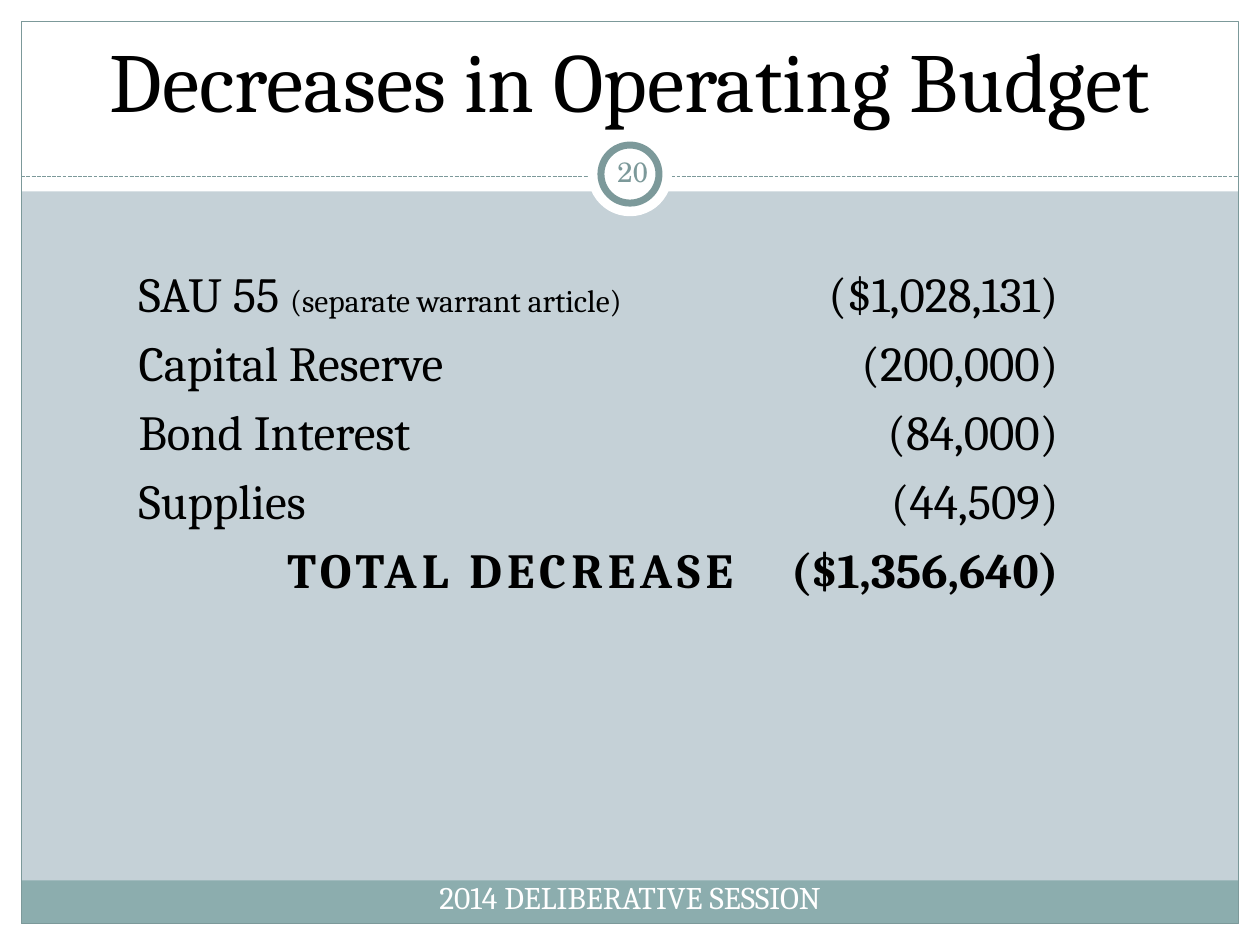
from pptx import Presentation
from pptx.dml.color import RGBColor
from pptx.enum.dml import MSO_LINE
from pptx.enum.shapes import MSO_CONNECTOR, MSO_SHAPE
from pptx.enum.text import MSO_ANCHOR as ANCHOR, PP_ALIGN as ALIGN
from pptx.oxml.ns import qn
from pptx.util import Cm, Pt
from lxml.etree import SubElement

WIDTH, HEIGHT = 25.4, 19.05
MARGIN = 0.43
HEADER_H = 3.86
RULE_Y = 3.56
BADGE_Y = 3.51
WHITE, BLACK, TEAL, SAGE, MIST = "FFFFFF", "000000", "7C999A", "8CADAE", "C5D1D7"
NO_STYLE = "{2D5ABB26-0587-4C30-8999-92F81FD0307C}"
DECREASES = [
    ("SAU 55 ", "(separate warrant article)", "($1,028,131)"),
    ("Capital Reserve", "", "(200,000)"),
    ("Bond Interest", "", "(84,000)"),
    ("Supplies", "", "(44,509)"),
]
TOTAL = ("TOTAL DECREASE", "($1,356,640)")


def rgb(color):
    return RGBColor.from_string(color)


def add_run(p, text, size, color=BLACK, font="Cambria", bold=False, spacing=0):
    """Append a run; spacing is the letter spacing in points."""
    r = p.add_run()
    r.text = text
    r.font.size, r.font.name, r.font.bold = Pt(size), font, bold
    r.font.color.rgb = rgb(color)
    if spacing:
        r._r.get_or_add_rPr().set("spc", str(spacing * 100))


def add_block(slide, kind, x, y, w, h, fill=None, line=None, weight=0.75):
    sp = slide.shapes.add_shape(kind, Cm(x), Cm(y), Cm(w), Cm(h))
    sp.shadow.inherit = False
    if fill:
        sp.fill.solid()
        sp.fill.fore_color.rgb = rgb(fill)
    else:
        sp.fill.background()
    if line:
        sp.line.color.rgb = rgb(line)
        sp.line.width = Pt(weight)
    else:
        sp.line.fill.background()


def add_disc(slide, diameter, **style):
    """Draw a circle centred on the page-number badge."""
    add_block(slide, MSO_SHAPE.OVAL, (WIDTH - diameter) / 2, BADGE_Y - diameter / 2,
              diameter, diameter, **style)


def add_rule(slide):
    rule = slide.shapes.add_connector(MSO_CONNECTOR.STRAIGHT, Cm(MARGIN), Cm(RULE_Y),
                                      Cm(WIDTH - MARGIN), Cm(RULE_Y))
    rule.line.color.rgb = rgb(TEAL)
    rule.line.width = Pt(0.75)
    rule.line.dash_style = MSO_LINE.SQUARE_DOT
    SubElement(rule._element.spPr, qn("a:effectLst"))


def add_frame(slide):
    inner_w, inner_h = WIDTH - 2 * MARGIN, HEIGHT - 2 * MARGIN
    bands = [
        (0, HEIGHT - MARGIN, WIDTH, MARGIN, WHITE),
        (0, 0, WIDTH, HEADER_H, WHITE),
        (0, 0, MARGIN, HEIGHT, WHITE),
        (WIDTH - MARGIN, 0, MARGIN, HEIGHT, WHITE),
        (MARGIN, 17.75, inner_w, 0.87, SAGE),
    ]
    for x, y, w, h, fill in bands:
        add_block(slide, MSO_SHAPE.RECTANGLE, x, y, w, h, fill)
    add_block(slide, MSO_SHAPE.RECTANGLE, MARGIN, MARGIN, inner_w, inner_h, line=TEAL)
    add_rule(slide)
    add_disc(slide, 1.7, fill=WHITE)
    add_disc(slide, 1.17, fill=WHITE, line=TEAL, weight=4)


def add_title(slide, text):
    """Fill the title placeholder and bring it in front of the frame."""
    title = slide.shapes.title
    slide.shapes._spTree.append(title._element)
    title.left, title.top, title.width, title.height = Cm(0.85), Cm(0.64), Cm(23.7), Cm(2.1)
    tf = title.text_frame
    tf.vertical_anchor = ANCHOR.BOTTOM
    p = tf.paragraphs[0]
    p.alignment = ALIGN.CENTER
    add_run(p, text, 48)


def add_label(slide, x, y, w, h, text, size, color, font="Cambria", inset=None,
              anchor=ANCHOR.TOP):
    tf = slide.shapes.add_textbox(Cm(x), Cm(y), Cm(w), Cm(h)).text_frame
    tf.word_wrap = True
    tf.vertical_anchor = anchor
    if inset is not None:
        tf.margin_left = tf.margin_right = tf.margin_top = tf.margin_bottom = Cm(inset)
    p = tf.paragraphs[0]
    p.alignment = ALIGN.CENTER
    add_run(p, text, size, color, font)


def add_budget_table(slide):
    n_rows = len(DECREASES) + 1
    row_h = 1.39
    table = slide.shapes.add_table(n_rows, 2, Cm(2.54), Cm(5.28), Cm(19.05),
                                   Cm(row_h * n_rows)).table
    table.first_row = table.horz_banding = False
    table._tbl.tblPr.find(qn("a:tableStyleId")).text = NO_STYLE
    for column, width in zip(table.columns, (12.5, 6.55)):
        column.width = Cm(width)
    for cell in table.iter_cells():
        cell.fill.background()

    for i, (item, note, amount) in enumerate(DECREASES):
        p = table.cell(i, 0).text_frame.paragraphs[0]
        add_run(p, item, 28)
        if note:
            add_run(p, note, 18)
        p = table.cell(i, 1).text_frame.paragraphs[0]
        p.alignment = ALIGN.RIGHT
        add_run(p, amount, 28)

    for j, (text, spacing) in enumerate(zip(TOTAL, (3, 0))):
        p = table.cell(n_rows - 1, j).text_frame.paragraphs[0]
        p.alignment = ALIGN.RIGHT
        add_run(p, text, 28, bold=True, spacing=spacing)


def main():
    prs = Presentation()
    prs.slide_width, prs.slide_height = Cm(WIDTH), Cm(HEIGHT)
    slide = prs.slides.add_slide(prs.slide_layouts[5])
    slide.background.fill.solid()
    slide.background.fill.fore_color.rgb = rgb(MIST)
    add_frame(slide)
    add_title(slide, "Decreases in Operating Budget")
    add_budget_table(slide)
    add_label(slide, MARGIN, 17.58, 24.55, 1.02, "2014 DELIBERATIVE SESSION", 18, WHITE)
    add_label(slide, 12.12, 2.85, 1.27, 1.22, "20", 16, TEAL, "TeX Gyre Schola",
              inset=0.13, anchor=ANCHOR.MIDDLE)
    prs.save("out.pptx")


if __name__ == "__main__":
    main()
